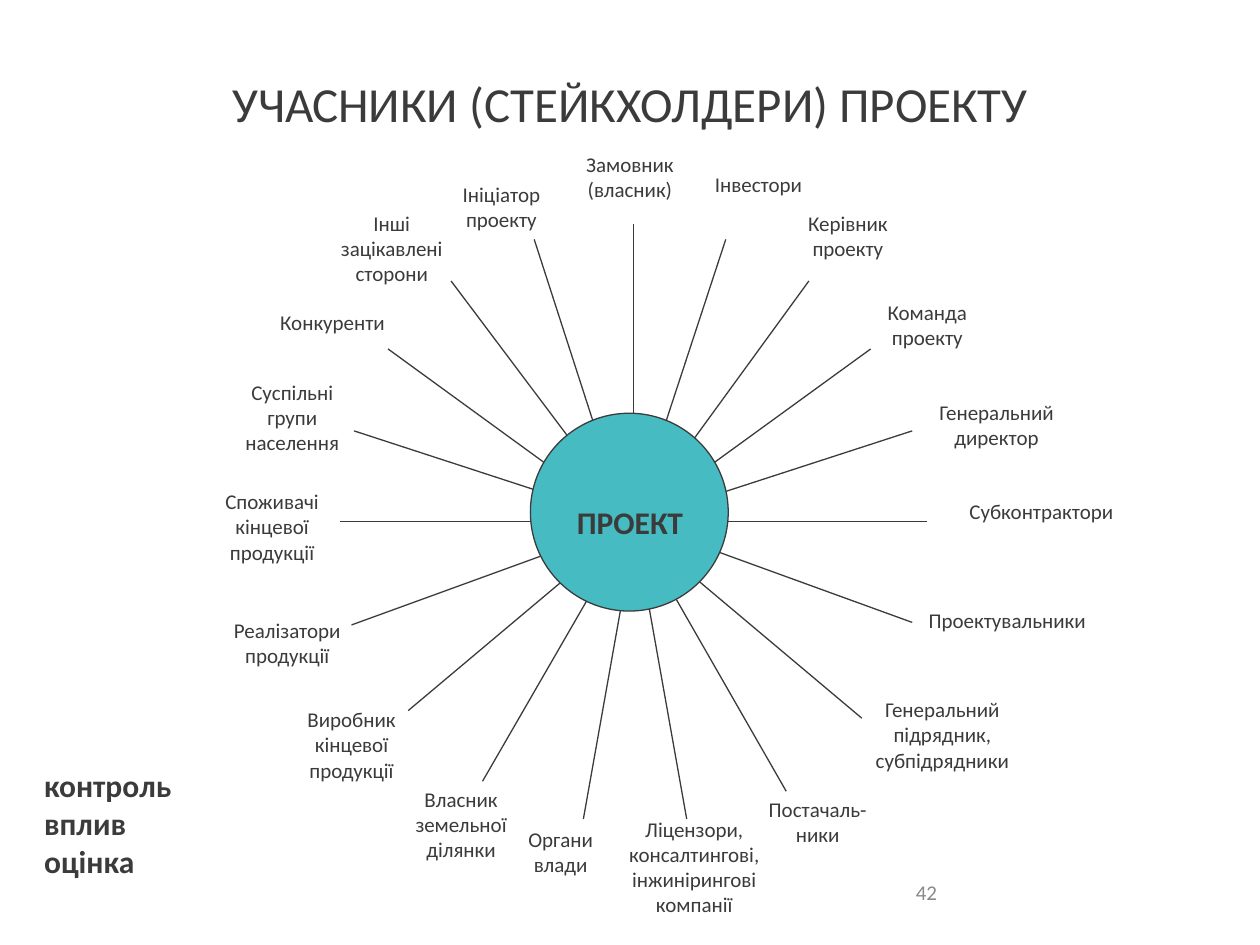
import collections

import lxml.etree
import pptx
import pptx.dml.color
import pptx.enum.shapes
import pptx.enum.text
import pptx.oxml.ns
import pptx.util

Inches = pptx.util.Inches
Align = pptx.enum.text.PP_ALIGN
Anchor = pptx.enum.text.MSO_ANCHOR
Box = collections.namedtuple("Box", "left top width height")
Stakeholder = collections.namedtuple("Stakeholder", "label left top width lines tip root")

INK = "3B3B3B"
TEAL = "46BCC2"
GREY = "898989"
FONT = "Calibri"

STAKEHOLDERS = [
    Stakeholder("Замовник (власник)", 2.95, 0.15, 1.1, 2, (3.53, 0.78), (3.53, 2.99)),
    Stakeholder("Інвестори", 3.97, 0.31, 1.1, 1, (4.26, 0.9), (3.4, 3.52)),
    Stakeholder("Керівник проекту", 4.68, 0.62, 1.1, 2, (4.92, 1.23), (3.34, 3.4)),
    Stakeholder("Команда проекту", 5.31, 1.33, 1.1, 2, (5.41, 1.77), (3.44, 3.2)),
    Stakeholder("Генеральний директор", 5.78, 2.12, 1.26, 2, (5.74, 2.42), (3.43, 3.17)),
    Stakeholder("Субконтрактори", 6.02, 2.91, 1.49, 1, (5.86, 3.14), (3.53, 3.14)),
    Stakeholder("Проектувальники", 5.63, 3.77, 1.73, 1, (5.74, 3.94), (3.95, 3.29)),
    Stakeholder("Генеральний підрядник, субпідрядники", 5.23, 4.48, 1.5, 3, (5.34, 4.7), (3.46, 3.12)),
    Stakeholder("Постачаль-ники", 4.44, 5.27, 1.1, 2, (4.74, 5.28), (3.52, 3.15)),
    Stakeholder("Ліцензори, консалтингові, інжинірингові компанії", 3.34, 5.43, 1.34, 4, (3.95, 5.5), (3.52, 3.08)),
    Stakeholder("Органи влади", 2.4, 5.51, 1.1, 2, (3.13, 5.5), (3.56, 3.08)),
    Stakeholder("Власник земельної ділянки", 1.61, 5.19, 1.1, 3, (2.33, 5.2), (3.56, 3.07)),
    Stakeholder("Виробник кінцевої продукції", 0.74, 4.56, 1.1, 3, (1.74, 4.64), (3.62, 3.06)),
    Stakeholder("Реалізатори продукції", 0.19, 3.85, 1.18, 2, (1.29, 3.96), (3.6, 3.12)),
    Stakeholder("Споживачі кінцевої продукції", 0.11, 2.83, 1.1, 3, (1.2, 3.14), (3.53, 3.14)),
    Stakeholder("Суспільні групи населення", 0.27, 1.96, 1.1, 3, (1.31, 2.42), (3.58, 3.16)),
    Stakeholder("Конкуренти", 0.59, 1.41, 1.1, 1, (1.58, 1.77), (3.56, 3.21)),
    Stakeholder("Інші зацікавлені сторони", 1.06, 0.62, 1.1, 3, (2.08, 1.23), (3.5, 3.12)),
    Stakeholder("Ініціатор проекту", 1.93, 0.39, 1.1, 2, (2.74, 0.9), (3.49, 3.22)),
]


def color(value):
    """Turn a hex string into a colour."""
    return pptx.dml.color.RGBColor.from_string(value)


def format_text(text_frame, size, ink=INK, bold=False, alignment=Align.LEFT):
    """Give every paragraph and run of a text frame one look."""
    for paragraph in text_frame.paragraphs:
        paragraph.alignment = alignment
        for run in paragraph.runs:
            run.font.name = FONT
            run.font.size = pptx.util.Pt(size)
            run.font.bold = bold
            run.font.color.rgb = color(ink)


def add_text(slide, box, text, size, **look):
    """Add a wrapping text box and return its text frame."""
    shape = slide.shapes.add_textbox(*map(Inches, box))
    text_frame = shape.text_frame
    text_frame.word_wrap = True
    text_frame.text = text
    format_text(text_frame, size, **look)
    return text_frame


def add_ray(slide, box, tip, root):
    """Draw a thin line between two points of the box."""
    connector = slide.shapes.add_connector(
        pptx.enum.shapes.MSO_CONNECTOR.STRAIGHT,
        Inches(box.left + tip[0]), Inches(box.top + tip[1]),
        Inches(box.left + root[0]), Inches(box.top + root[1]))
    connector.line.color.rgb = color(INK)
    connector.line.width = pptx.util.Pt(0.75)
    lxml.etree.SubElement(connector._element.spPr, pptx.oxml.ns.qn("a:effectLst"))


def add_title(slide, box):
    """Place and format the title placeholder."""
    title = slide.shapes.title
    title.left, title.top, title.width, title.height = map(Inches, box)
    text_frame = title.text_frame
    text_frame.text = "УЧАСНИКИ (СТЕЙКХОЛДЕРИ) ПРОЕКТУ"
    text_frame.vertical_anchor = Anchor.MIDDLE
    text_frame.margin_bottom = Inches(0.25)
    format_text(text_frame, 28, alignment=Align.CENTER)


def add_hub(slide, box):
    """Draw the project circle with its caption."""
    circle = slide.shapes.add_shape(pptx.enum.shapes.MSO_SHAPE.OVAL, *map(Inches, box))
    circle.shadow.inherit = False
    circle.fill.solid()
    circle.fill.fore_color.rgb = color(TEAL)
    circle.line.color.rgb = color(INK)
    circle.line.width = pptx.util.Pt(0.75)
    caption = Box(box.left + 0.08, box.top + 0.71, box.width - 0.15, 0.3)
    text_frame = add_text(slide, caption, "ПРОЕКТ", 18, bold=True, alignment=Align.CENTER)
    text_frame.margin_left = text_frame.margin_right = 0
    text_frame.margin_top = text_frame.margin_bottom = 0


def add_stakeholder_map(slide, box):
    """Draw the rays, the hub over them and a label at each ray."""
    for stakeholder in STAKEHOLDERS:
        add_ray(slide, box, stakeholder.tip, stakeholder.root)
    add_hub(slide, Box(box.left + 2.71, box.top + 2.28, 1.57, 1.57))
    for stakeholder in STAKEHOLDERS:
        label_box = Box(box.left + stakeholder.left, box.top + stakeholder.top,
                        stakeholder.width, 0.1 + 0.2 * stakeholder.lines)
        add_text(slide, label_box, stakeholder.label, 12, alignment=Align.CENTER)


def add_activities(slide, box):
    """List the stakeholder management activities."""
    text_frame = add_text(slide, box, "контроль\nвплив\nоцінка", 18, bold=True)
    text_frame.margin_left = Inches(0.15)


def add_slide_number(slide, box):
    """Write the slide number."""
    text_frame = add_text(slide, box, "42", 12, ink=GREY)
    text_frame.vertical_anchor = Anchor.MIDDLE


def main():
    """Build and save the presentation."""
    presentation = pptx.Presentation()
    presentation.slide_width = Inches(10)
    presentation.slide_height = Inches(7.5)
    slide = presentation.slides.add_slide(presentation.slide_layouts.get_by_name("Title Only"))
    add_title(slide, Box(0.5, 0.5, 9, 0.83))
    add_stakeholder_map(slide, Box(1.5, 1, 7.5, 6.4))
    add_activities(slide, Box(0.2, 6.03, 2.09, 1))
    add_slide_number(slide, Box(7.17, 6.83, 2.33, 0.5))
    presentation.save("out.pptx")


if __name__ == "__main__":
    main()
